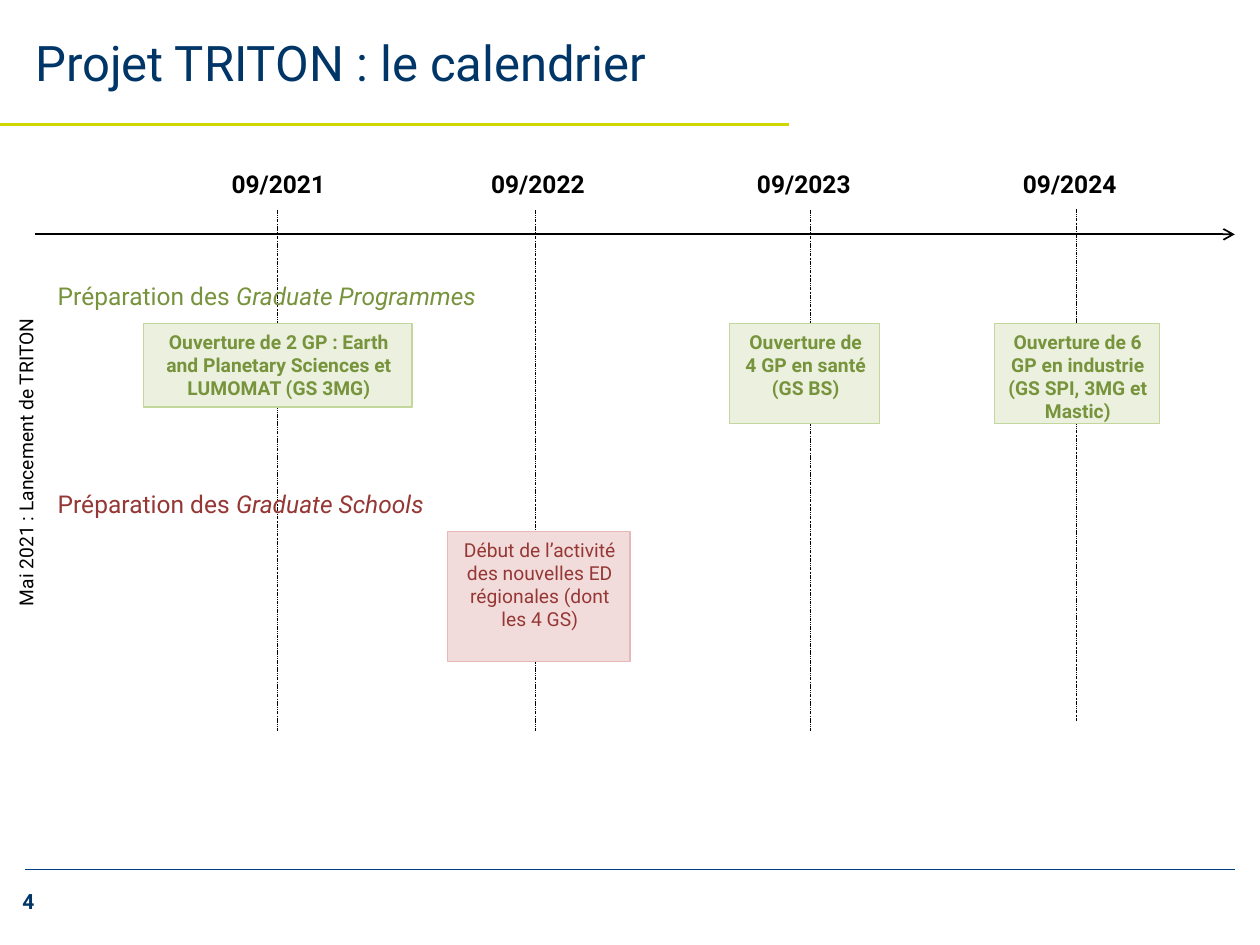
"""Build the TRITON project calendar slide."""
from pptx import Presentation
from pptx import util as u
from pptx.dml.color import RGBColor
from pptx.enum import dml, shapes, text
from pptx.oxml.ns import qn
from lxml import etree

NAVY, BLACK, GREEN, RED = "003667", "000000", "77933C", "953735"
ALIGN = text.PP_ALIGN


def add_line(x1, y1, x2, y2, color, width):
    ln = s.shapes.add_connector(
        shapes.MSO_CONNECTOR.STRAIGHT, *map(u.Inches, (x1, y1, x2, y2)))
    ln.line.color.rgb = RGBColor.from_string(color)
    ln.line.width = u.Pt(width)
    etree.SubElement(ln._element.spPr, qn("a:effectLst"))
    return ln


def write(sp, runs, size, color, bold=False, align=ALIGN.LEFT, wrap=True):
    tf = sp.text_frame
    tf.word_wrap = wrap
    p = tf.paragraphs[0]
    p.alignment = align
    for i, words in enumerate(runs):
        r = p.add_run()
        r.text = words
        r.font.name = "Roboto"
        r.font.size = u.Pt(size)
        r.font.bold = bold
        r.font.italic = i > 0
        r.font.color.rgb = RGBColor.from_string(color)
    return p


prs = Presentation()
prs.slide_width, prs.slide_height = u.Inches(10), u.Inches(7.5)
s = prs.slides.add_slide(prs.slide_layouts[5])

title = s.shapes.title
title.left, title.top, title.width, title.height = map(u.Inches, (0.18, 0, 9.82, 0.99))
title.text_frame.auto_size = text.MSO_AUTO_SIZE.NONE
title.text_frame.vertical_anchor = text.MSO_ANCHOR.MIDDLE
write(title, ["Projet TRITON : le calendrier"], 28, NAVY)

add_line(0.2, 6.9, 9.8, 6.9, "004080", 0.5)
add_line(0, 0.99, 6.26, 0.99, "D0D700", 2)
number = s.shapes.add_textbox(*map(u.Inches, (0.08, 7, 0.95, 0.3)))
write(number, ["4"], 12, NAVY, bold=True)

axis = add_line(0.28, 1.86, 9.8, 1.86, BLACK, 1)
etree.SubElement(axis._element.spPr.find(qn("a:ln")), qn("a:tailEnd"), type="arrow")

milestones = [
    ("09/2021", 1.69, 2.2, 1.67, 5.8, ALIGN.CENTER),
    ("09/2022", 3.75, 4.25, 1.67, 5.8, ALIGN.CENTER),
    ("09/2023", 5.91, 6.43, 1.67, 5.8, ALIGN.LEFT),
    ("09/2024", 8.02, 8.54, 1.66, 5.72, ALIGN.LEFT),
]
for date, left, x, top, bottom, align in milestones:
    ln = add_line(x, top, x, bottom, BLACK, 0.25)
    ln.line.dash_style = dml.MSO_LINE.DASH_DOT_DOT
    sp = s.shapes.add_textbox(*map(u.Inches, (left, 1.26, 1.04, 0.41)))
    p = write(sp, [date], 14, BLACK, bold=True, align=align)
    p.line_spacing = 1.15

launch = s.shapes.add_textbox(*map(u.Inches, (-1.38, 3.51, 3.15, 0.32)))
launch.rotation = 270
p = write(launch, ["Mai 2021 : Lancement de TRITON"], 11, BLACK, align=ALIGN.CENTER)
p.line_spacing = 1.15

for kind, top, width, color in [("Graduate Programmes", 2.18, 3.61, GREEN),
                                ("Graduate Schools", 3.83, 3.16, RED)]:
    sp = s.shapes.add_textbox(*map(u.Inches, (0.36, top, width, 0.34)))
    write(sp, ["Préparation des ", kind], 14, color, wrap=False)

green_style = ("EBF1DE", "C3D69B", GREEN, True)
red_style = ("F2DCDB", "E6B9B8", RED, False)
events = [
    ("Ouverture de 2 GP : Earth and Planetary Sciences et LUMOMAT (GS 3MG)",
     (1.14, 2.57, 2.13, 0.66), green_style),
    ("Ouverture de 4 GP en santé (GS BS)", (5.79, 2.57, 1.19, 0.79), green_style),
    ("Ouverture de 6 GP en industrie (GS SPI, 3MG et Mastic)",
     (7.89, 2.57, 1.31, 0.79), green_style),
    ("Début de l’activité des nouvelles ED régionales (dont les 4 GS)",
     (3.55, 4.22, 1.45, 1.03), red_style),
]
for words, box, (fill, border, color, bold) in events:
    sp = s.shapes.add_shape(shapes.MSO_SHAPE.RECTANGLE, *map(u.Inches, box))
    sp.shadow.inherit = False
    sp.fill.solid()
    sp.fill.fore_color.rgb = RGBColor.from_string(fill)
    sp.line.color.rgb = RGBColor.from_string(border)
    sp.line.width = u.Pt(0.75)
    tf = sp.text_frame
    tf.vertical_anchor = text.MSO_ANCHOR.TOP
    tf.margin_right = u.Inches(0.08)
    write(sp, [words], 11, color, bold=bold, align=ALIGN.CENTER)

prs.save("out.pptx")
